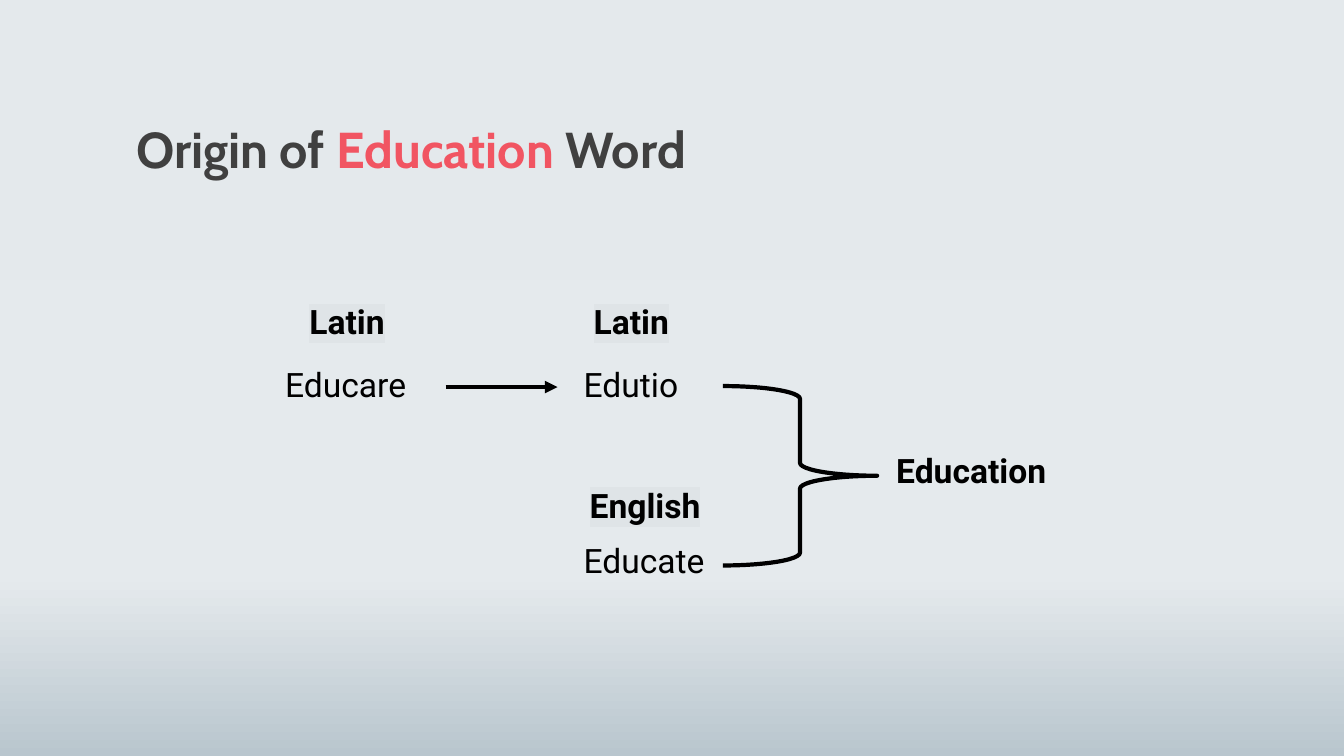
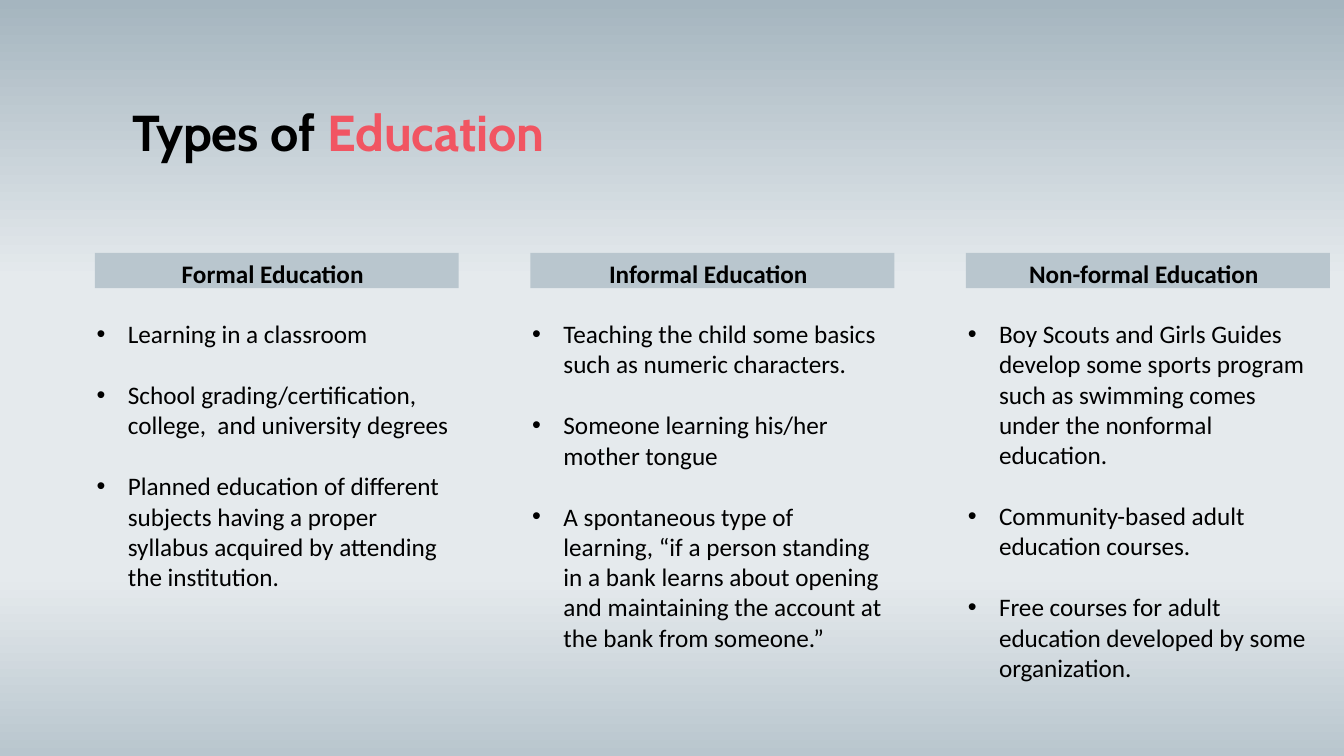
from lxml import etree
from pptx import Presentation
from pptx.dml.color import RGBColor
from pptx.enum.shapes import MSO_CONNECTOR, MSO_SHAPE
from pptx.enum.text import MSO_ANCHOR, MSO_AUTO_SIZE, PP_ALIGN
from pptx.oxml.ns import qn
from pptx.util import Inches, Pt

RECT, BRACE = MSO_SHAPE.RECTANGLE, MSO_SHAPE.RIGHT_BRACE
STRAIGHT = MSO_CONNECTOR.STRAIGHT
TOP, NO_FIT = MSO_ANCHOR.TOP, MSO_AUTO_SIZE.NONE
LEFT, CENTER = PP_ALIGN.LEFT, PP_ALIGN.CENTER
TITLE_ONLY = 5

COLORS = {
    "text": "000000", "gray": "404040", "accent": "F15562",
    "highlight": "DFE4E7", "bar": "B9C6CE",
    "pale": "E4E9EC", "mist": "E5EAED", "slate": "A5B5BF",
}
TITLE = {"name": "Cabin", "size": Pt(36), "bold": True}
WORD = {"name": "Roboto", "size": Pt(24), "bold": False}
STRONG = {**WORD, "bold": True}
BODY = {"name": "Calibri", "size": Pt(18), "bold": False}
HEADING = {**BODY, "bold": True}

# Word diagram: text columns, and rows for the words and their languages
WORD_COLS = {"root": 2.73, "source": 5.69, "result": 8.79}
WORD_ROWS = {"upper": 3.56, "result": 4.41, "lower": 5.31}
LANGUAGE_ROWS = {"upper": 2.94, "lower": 4.76}
LABEL_H = 0.49
LINE_PT = 3

# Three equal columns of types
TYPE_LEFT, TYPE_TOP, TYPE_STEP = 0.94, 2.51, 4.32
BAR_W, BAR_H = 3.61, 0.35
BODY_OFFSET, BODY_H = 0.6, 3.8
OVERHANG = 0.08
INDENT = 0.31
GAP_PT = 22

TYPES = [
    ("Formal Education", [
        "Learning in a classroom",
        "School grading/certification, college,  and university degrees",
        "Planned education of different subjects having a proper syllabus "
        "acquired by attending the institution.",
    ]),
    ("Informal Education", [
        "Teaching the child some basics such as numeric characters.",
        "Someone learning his/her mother tongue",
        "A spontaneous type of learning, “if a person standing in a bank "
        "learns about opening and maintaining the account at the bank from "
        "someone.”",
    ]),
    ("Non-formal Education", [
        "Boy Scouts and Girls Guides develop some sports program such as "
        "swimming comes under the nonformal education.",
        "Community-based adult education courses.",
        "Free courses for adult education developed by some organization.",
    ]),
]


def rgb(key):
    return RGBColor.from_string(COLORS[key])


def box(left, top, width, height):
    return [Inches(v) for v in (left, top, width, height)]


def add_run(p, text, style, color="text"):
    r = p.add_run()
    r.text = text
    for name, value in style.items():
        setattr(r.font, name, value)
    r.font.color.rgb = rgb(color)
    return r


def set_frame(tf):
    tf.word_wrap = True
    tf.auto_size = NO_FIT
    tf.vertical_anchor = TOP


def set_background(s, first):
    """Vertical four-stop gradient; only the top colour varies."""
    fill = s.background.fill
    fill.gradient()
    fill.gradient_angle = 270
    stops = s.element.xpath(".//p:bgPr/a:gradFill/a:gsLst")[0]
    for old in list(stops):
        stops.remove(old)
    for pos, key in ((0, first), (37, "mist"), (77, "pale"), (100, "bar")):
        gs = etree.SubElement(stops, qn("a:gs"), pos=str(pos * 1000))
        etree.SubElement(gs, qn("a:srgbClr"), val=COLORS[key])


def add_slide(prs, top_color, title_left, title_top, title_parts):
    s = prs.slides.add_slide(prs.slide_layouts[TITLE_ONLY])
    set_background(s, top_color)
    title = s.shapes.title
    title.left, title.top, title.width, title.height = box(
        title_left, title_top, 6.5, 0.71)
    set_frame(title.text_frame)
    p = title.text_frame.paragraphs[0]
    p.alignment = LEFT
    for text, color in title_parts:
        add_run(p, text, TITLE, color)
    return s


def add_text_box(s, left, top, width, height):
    tf = s.shapes.add_textbox(*box(left, top, width, height)).text_frame
    set_frame(tf)
    return tf


def add_label(s, text, left, top, width, style):
    tf = add_text_box(s, left, top, width, LABEL_H)
    return add_run(tf.paragraphs[0], text, style)


def add_language(s, text, left, top, width):
    r = add_label(s, text, left, top, width, STRONG)
    mark = etree.Element(qn("a:highlight"))
    etree.SubElement(mark, qn("a:srgbClr"), val=COLORS["highlight"])
    r.font._element.find(qn("a:solidFill")).addnext(mark)


def set_line(shape):
    shape.line.color.rgb = rgb("text")
    shape.line.width = Pt(LINE_PT)


def add_arrow(s, x1, x2, y):
    arrow = s.shapes.add_connector(
        STRAIGHT, Inches(x1), Inches(y), Inches(x2), Inches(y))
    set_line(arrow)
    sp_pr = arrow.element.spPr
    etree.SubElement(sp_pr.find(qn("a:ln")), qn("a:tailEnd"), type="triangle")
    etree.SubElement(sp_pr, qn("a:effectLst"))


def add_brace(s, left, top, width, height):
    brace = s.shapes.add_shape(BRACE, *box(left, top, width, height))
    brace.shadow.inherit = False
    brace.fill.background()
    set_line(brace)


def add_bar(s, text, left, top):
    bar = s.shapes.add_shape(RECT, *box(left, top, BAR_W, BAR_H))
    bar.shadow.inherit = False
    bar.fill.solid()
    bar.fill.fore_color.rgb = rgb("bar")
    bar.line.fill.background()
    tf = bar.text_frame
    set_frame(tf)
    tf.margin_left, tf.margin_right = 0, Inches(OVERHANG)
    p = tf.paragraphs[0]
    p.alignment = CENTER
    add_run(p, text, HEADING)


def add_bullets(s, items, left, top):
    tf = add_text_box(s, left, top, BAR_W + OVERHANG, BODY_H)
    for i, item in enumerate(items):
        p = tf.add_paragraph() if i else tf.paragraphs[0]
        p.space_before = Pt(GAP_PT if i else 0)
        add_run(p, item, BODY)
        p_pr = p._p.get_or_add_pPr()
        p_pr.set("marL", str(Inches(INDENT)))
        p_pr.set("indent", str(-Inches(INDENT)))
        etree.SubElement(p_pr, qn("a:buFont"), typeface="Arial")
        etree.SubElement(p_pr, qn("a:buChar"), char="•")


def build_origin(prs):
    s = add_slide(prs, "pale", 1.25, 1.12, [
        ("Origin of ", "gray"), ("Education", "accent"), (" Word", "gray")])
    for text, col, row, width, style in (
            ("Educare", "root", "upper", 1.5, WORD),
            ("Edutio", "source", "upper", 1.25, WORD),
            ("Educate", "source", "lower", 1.5, WORD),
            ("Education", "result", "result", 1.8, STRONG)):
        add_label(s, text, WORD_COLS[col], WORD_ROWS[row], width, style)
    for text, left, row in (("Latin", 2.97, "upper"),
                            ("Latin", 5.79, "upper"),
                            ("English", 5.75, "lower")):
        add_language(s, text, left, LANGUAGE_ROWS[row], 1.4)
    add_arrow(s, 4.42, 5.53, 3.84)
    add_brace(s, 7.17, 3.83, 1.53, 1.78)


def build_types(prs):
    s = add_slide(prs, "slate", 1.21, 0.95, [
        ("Types of ", "text"), ("Education", "accent")])
    for i, (heading, items) in enumerate(TYPES):
        left = TYPE_LEFT + i * TYPE_STEP
        add_bar(s, heading, left, TYPE_TOP)
        add_bullets(s, items, left - OVERHANG, TYPE_TOP + BODY_OFFSET)


def main():
    prs = Presentation()
    prs.slide_width, prs.slide_height = Inches(13.33), Inches(7.5)
    build_origin(prs)
    build_types(prs)
    prs.save("out.pptx")


if __name__ == "__main__":
    main()
